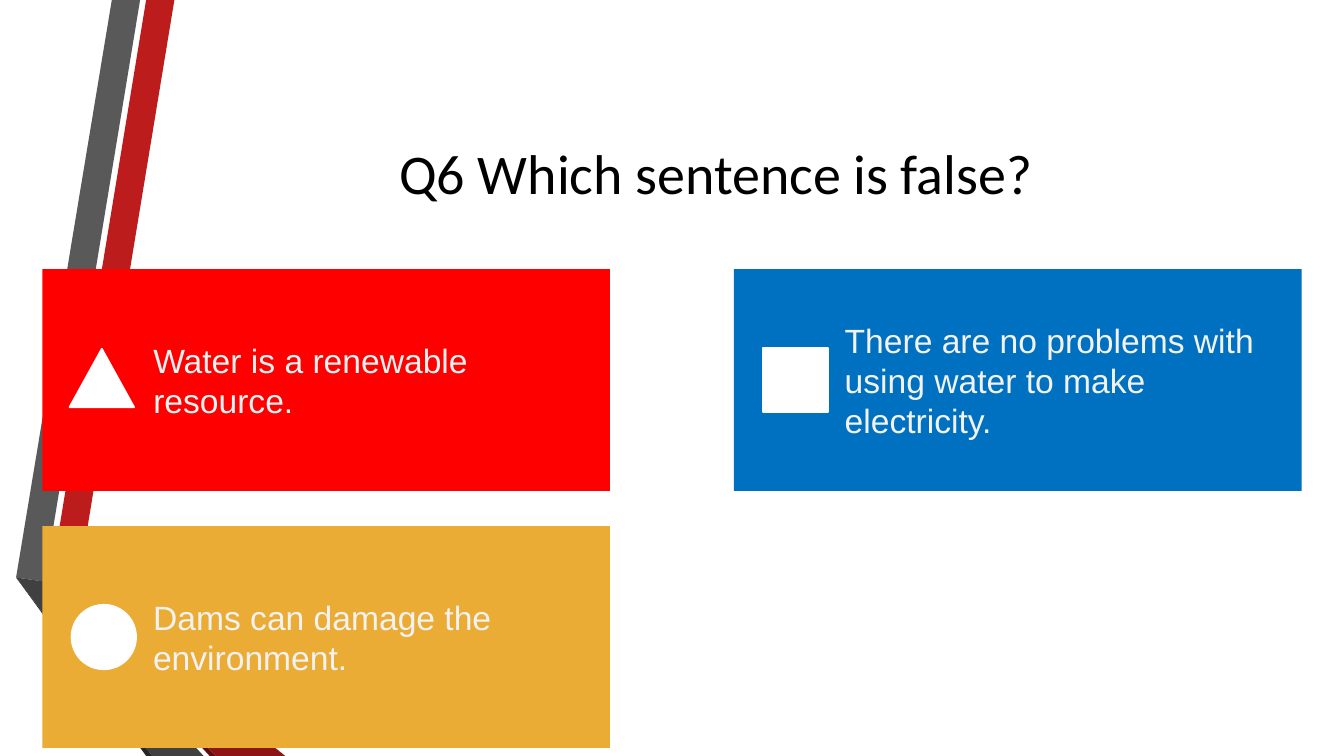
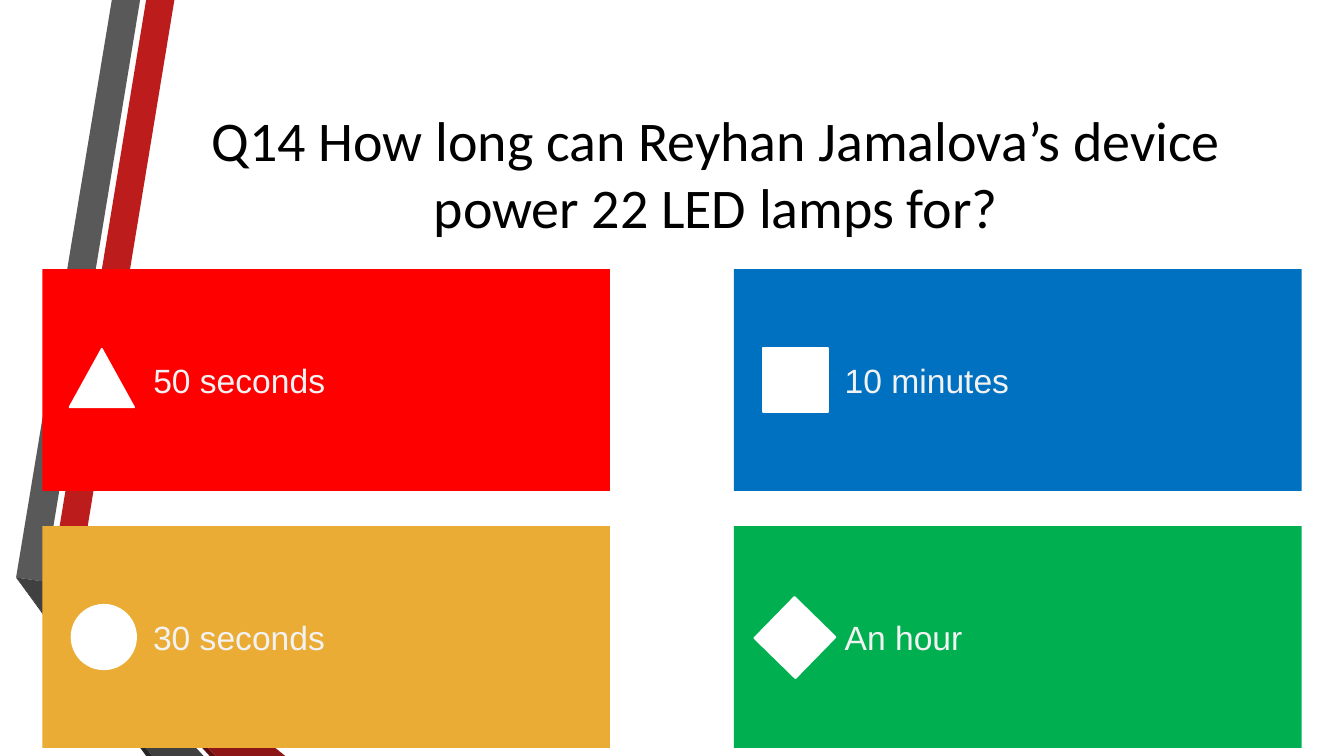
from collections import namedtuple

from lxml.etree import SubElement
from pptx import Presentation
from pptx.dml.color import RGBColor
from pptx.enum.shapes import MSO_SHAPE as Preset
from pptx.enum.text import MSO_ANCHOR as Anchor, MSO_AUTO_SIZE as AutoSize, PP_ALIGN as Align
from pptx.oxml.ns import qn
from pptx.util import Pt

PX = 9144
SLIDE_SIZE = (1333, 750)
TITLE_BOX = (162, 75, 1096, 192)
TILE_LEFT, TILE_TOP = 42, 267
TILE_WIDTH, TILE_HEIGHT = 563, 220
COLUMN_STEP, ROW_STEP = 686, 255
ANSWER_INDENT = 100

BLACK = RGBColor(0x00, 0x00, 0x00)
WHITE = RGBColor(0xFF, 0xFF, 0xFF)
OFF_WHITE = RGBColor(0xF2, 0xF2, 0xF2)
RED = RGBColor(0xFF, 0x00, 0x00)
BLUE = RGBColor(0x00, 0x70, 0xC0)
AMBER = RGBColor(0xEA, 0xAC, 0x35)
GREEN = RGBColor(0x00, 0xB0, 0x50)
BAND_RED = RGBColor(0xBC, 0x1C, 0x1C)
FOLD_RED = RGBColor(0x8D, 0x15, 0x15)
EDGE_RED = RGBColor(0x5E, 0x0E, 0x0E)
BAND_GREY = RGBColor(0x59, 0x59, 0x59)
FOLD_GREY = RGBColor(0x40, 0x40, 0x40)
EDGE_GREY = RGBColor(0x26, 0x26, 0x26)

RIBBONS = [
    (BAND_RED, [(50, 578), (77, 583), (173, 0), (145, 0)]),
    (BAND_GREY, [(139, 0), (111, 0), (16, 573), (44, 577)]),
    (EDGE_GREY, [(16, 573), (145, 750), (151, 750)]),
    (EDGE_RED, [(50, 579), (208, 750), (214, 750)]),
    (FOLD_RED, [(50, 579), (214, 750), (283, 750), (77, 583), (50, 578)]),
    (FOLD_GREY, [(202, 750), (48, 583), (43, 578), (44, 577), (16, 573), (151, 750)]),
]

Option = namedtuple("Option", "color symbol symbol_box rotation")
OPTIONS = [
    Option(RED, Preset.ISOSCELES_TRIANGLE, (27, 79, 64, 58), 0),
    Option(BLUE, Preset.RECTANGLE, (29, 78, 64, 64), 0),
    Option(AMBER, Preset.OVAL, (29, 78, 64, 64), 0),
    Option(GREEN, Preset.RECTANGLE, (32, 82, 57, 57), 314.3),
]

QUESTIONS = [
    ("Q6 Which sentence is false?", [
        "Water is a renewable resource.",
        "There are no problems with using water to make electricity.",
        "Dams can damage the environment.",
    ]),
    ("Q14 How long can Reyhan Jamalova’s device power 22 LED lamps for?", [
        "50 seconds",
        "10 minutes",
        "30 seconds",
        "An hour",
    ]),
]


def emu(lengths):
    return [length * PX for length in lengths]


def place(shape, box):
    shape.left, shape.top, shape.width, shape.height = emu(box)


def paint(shape, color, outline=None):
    shape.fill.solid()
    shape.fill.fore_color.rgb = color
    if outline is None:
        shape.line.fill.background()
    else:
        shape.line.color.rgb = color
        shape.line.width = Pt(outline)


def add_preset(slide, preset, box):
    shape = slide.shapes.add_shape(preset, *emu(box))
    shape.shadow.inherit = False
    return shape


def write_text(shape, text, *, font, size, color, align=Align.LEFT,
               indent=0, before=0, after=0):
    frame = shape.text_frame
    frame.text = text
    frame.word_wrap = True
    frame.auto_size = AutoSize.NONE
    frame.vertical_anchor = Anchor.MIDDLE
    paragraph = frame.paragraphs[0]
    paragraph.alignment = align
    paragraph.space_before, paragraph.space_after = Pt(before), Pt(after)
    properties = paragraph.runs[0].font
    properties.name, properties.size = font, Pt(size)
    properties.color.rgb = color
    layout = paragraph._p.get_or_add_pPr()
    layout.set("marL", str(indent * PX))
    layout.set("indent", "0")
    SubElement(layout, qn("a:buNone"))


def tile_box(index):
    row, column = divmod(index, 2)
    return (TILE_LEFT + column * COLUMN_STEP, TILE_TOP + row * ROW_STEP,
            TILE_WIDTH, TILE_HEIGHT)


def draw_ribbon(slide, color, points):
    builder = slide.shapes.build_freeform(*points[0], scale=PX)
    builder.add_line_segments(points[1:], close=True)
    ribbon = builder.convert_to_shape()
    ribbon.shadow.inherit = False
    paint(ribbon, color)
    return ribbon


def prepare_layout(layout):
    title, body, *footers = layout.placeholders
    for footer in footers:
        layout.shapes.element.remove(footer.element)
    place(title, TITLE_BOX)
    place(body, tile_box(0))


def move_to_layout(layout, ribbons):
    for position, ribbon in enumerate(ribbons, start=2):
        layout.shapes.element.insert(position, ribbon.element)


def add_answer(slide, index, answer):
    option = OPTIONS[index]
    box = tile_box(index)
    if index == 0:
        tile = slide.placeholders[1]
    else:
        tile = add_preset(slide, Preset.RECTANGLE, box)
    paint(tile, option.color)
    write_text(tile, answer, font="Arial", size=24, color=OFF_WHITE,
               indent=ANSWER_INDENT, before=5, after=6)
    left, top, width, height = option.symbol_box
    symbol = add_preset(slide, option.symbol, (box[0] + left, box[1] + top, width, height))
    symbol.rotation = option.rotation
    paint(symbol, WHITE, outline=1.25)


def add_question(deck, layout, question, answers):
    slide = deck.slides.add_slide(layout)
    write_text(slide.shapes.title, question, font="Calibri", size=40,
               color=BLACK, align=Align.CENTER)
    for index, answer in enumerate(answers):
        add_answer(slide, index, answer)
    return slide


def main():
    deck = Presentation()
    deck.slide_width, deck.slide_height = emu(SLIDE_SIZE)
    layout = deck.slide_layouts[1]
    prepare_layout(layout)
    slides = [add_question(deck, layout, *question) for question in QUESTIONS]
    ribbons = [draw_ribbon(slides[0], *ribbon) for ribbon in RIBBONS]
    move_to_layout(layout, ribbons)
    deck.save("out.pptx")


if __name__ == "__main__":
    main()
